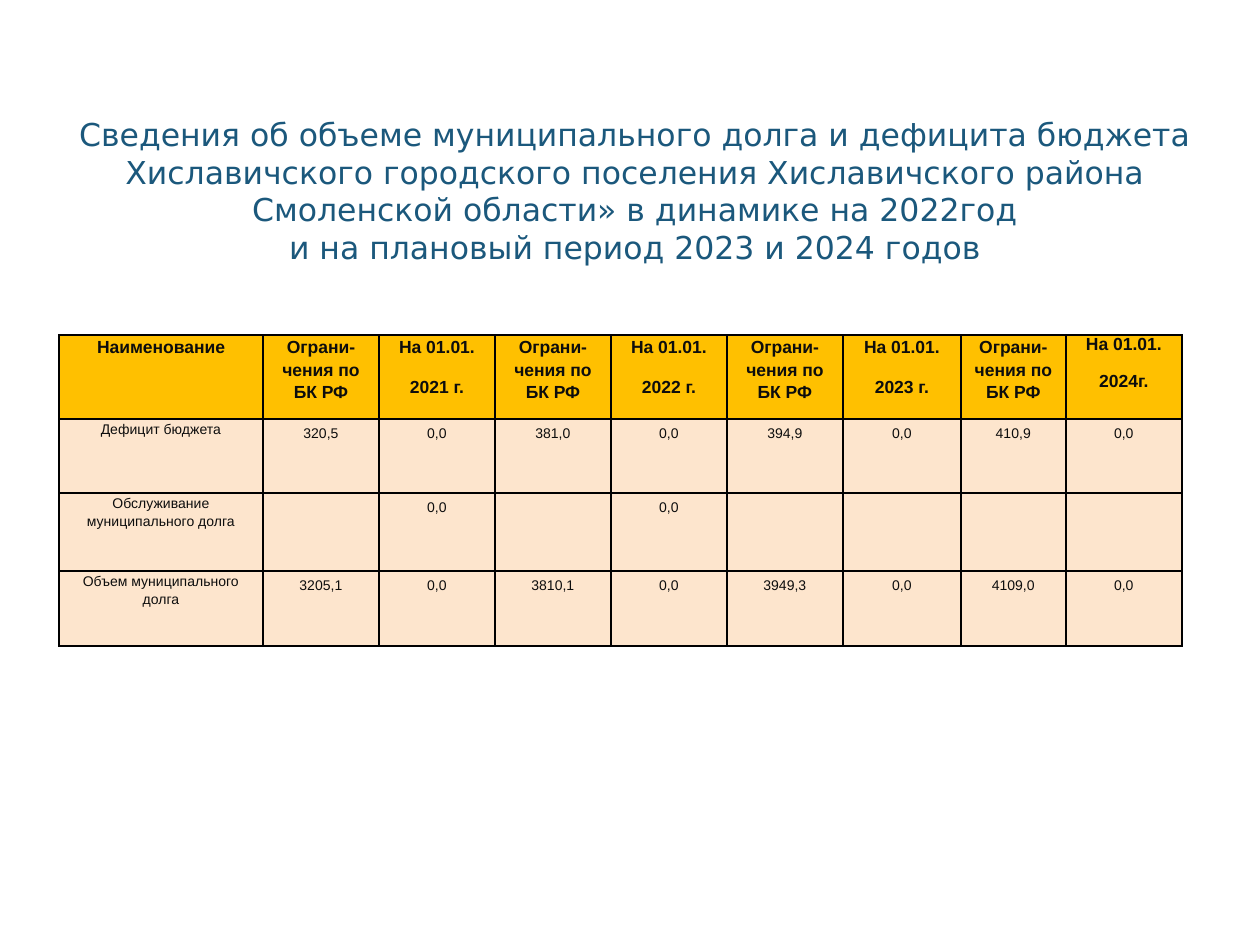
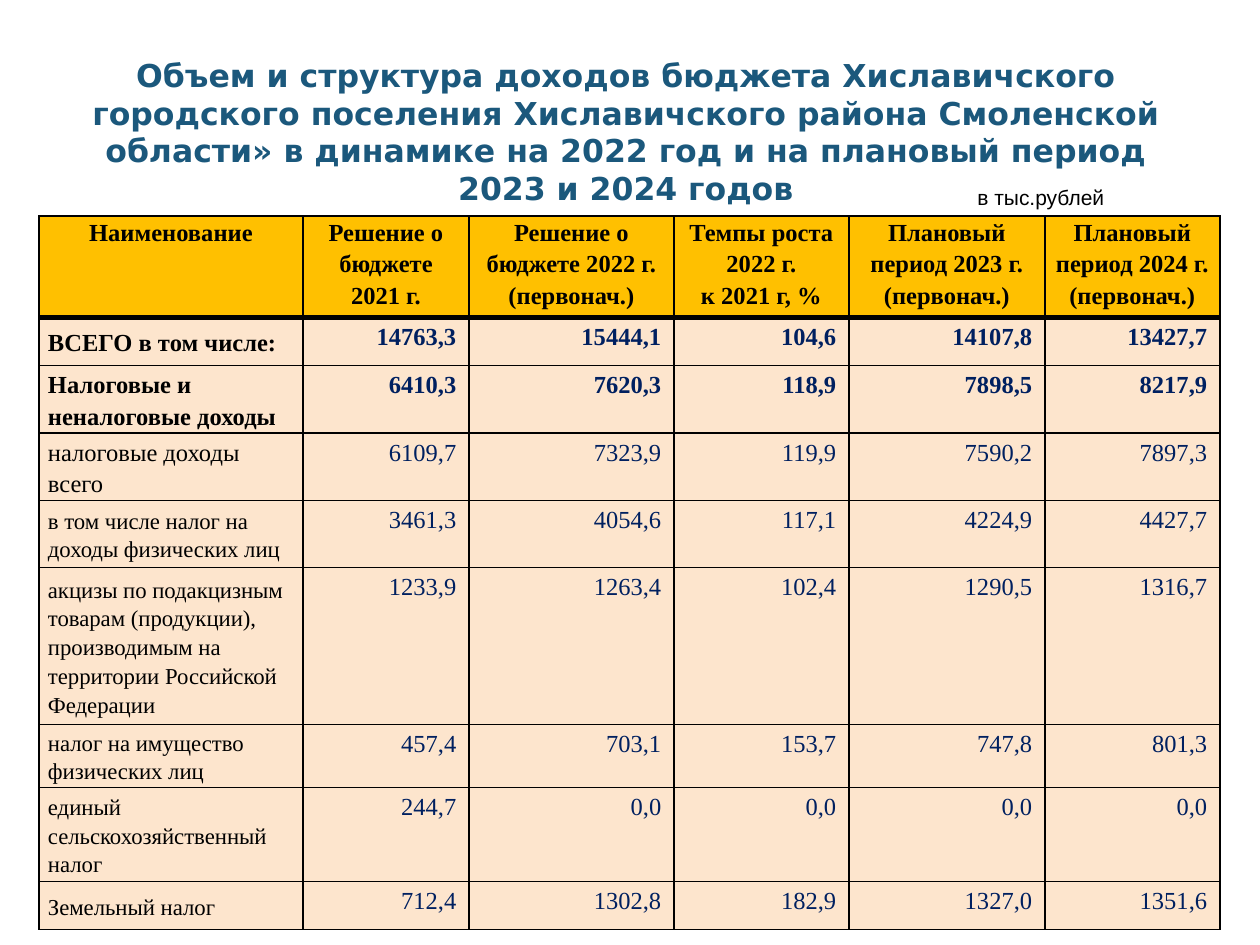
from dataclasses import dataclass, replace
from typing import Any

from lxml import etree
from pptx import Presentation
from pptx.dml.color import RGBColor
from pptx.enum.text import MSO_ANCHOR, MSO_AUTO_SIZE, PP_ALIGN
from pptx.oxml.ns import qn
from pptx.util import Pt

SCALE = 914400 / 126
LEFT, MID, RIGHT = PP_ALIGN.LEFT, PP_ALIGN.CENTER, PP_ALIGN.RIGHT
TOP, CENTRE, BASE = MSO_ANCHOR.TOP, MSO_ANCHOR.MIDDLE, MSO_ANCHOR.BOTTOM
GROW = MSO_AUTO_SIZE.SHAPE_TO_FIT_TEXT

BLUE = RGBColor(0x1B, 0x58, 0x7C)
NAVY = RGBColor(0x00, 0x20, 0x60)
BLACK = RGBColor(0x00, 0x00, 0x00)
INK = RGBColor(0x0D, 0x0D, 0x0D)
GOLD = RGBColor(0xFF, 0xC0, 0x00)
PEACH = RGBColor(0xFD, 0xE5, 0xCD)

SANS, SERIF, HEAD = "Arial", "Times New Roman", "DejaVu Sans"


@dataclass(frozen=True)
class Style:
    size: int
    color: RGBColor
    font: str
    bold: bool = False
    align: Any = MID
    line: float | None = None
    after: int = 0
    anchor: Any = TOP
    tight: bool = False


@dataclass(frozen=True)
class Box:
    left: int
    top: int
    width: int
    height: int


@dataclass(frozen=True)
class Cell:
    text: str
    style: Style
    fill: RGBColor = PEACH


@dataclass(frozen=True)
class Grid:
    left: int
    top: int
    cols: tuple[int, ...]
    rows: tuple[int, ...]
    rule: int


TITLE = Style(18, BLUE, HEAD, anchor=BASE)
NOTE = Style(12, BLACK, SANS, align=LEFT)

DEBT_HEAD = Style(10, INK, SANS, True, line=1.15, after=10, tight=True)
DEBT_NAME = replace(DEBT_HEAD, size=8, bold=False)
DEBT_NUM = Style(8, INK, SANS)

TAX_HEAD = Style(14, BLACK, SERIF, True, line=1.15, tight=True)
TAX_NAME = replace(TAX_HEAD, align=LEFT, anchor=CENTRE)
TAX_NUM = Style(14, NAVY, SERIF, align=RIGHT)

DEBT_GRID = Grid(59, 335, (204, 116, 116, 116, 116, 116, 118, 105, 116),
                 (84, 74, 78, 75), 1)
TAX_GRID = Grid(39, 216, (264, 166, 205, 175, 196, 175),
                (94, 48, 67, 62, 67, 143, 58, 86, 48), 3)

LIMIT = "Ограни-чения по БК РФ"
DATES = ("2021 г.", "2022 г.", "2023 г.", "2024г.")
DEBTS = (
    ("Дефицит бюджета",
     "320,5", "0,0", "381,0", "0,0", "394,9", "0,0", "410,9", "0,0"),
    ("Обслуживание муниципального долга",
     "", "0,0", "", "0,0", "", "", "", ""),
    ("Объем муниципального долга",
     "3205,1", "0,0", "3810,1", "0,0", "3949,3", "0,0", "4109,0", "0,0"),
)

TAX_TOPS = (
    "Наименование",
    "Решение о бюджете 2021 г.",
    "Решение о бюджете 2022 г.\n(первонач.)",
    "Темпы роста\n2022 г.\nк 2021 г, %",
    "Плановый период 2023 г.\n(первонач.)",
    "Плановый период 2024 г.\n(первонач.)",
)
TAXES = (
    ("ВСЕГО в том числе:",
     "14763,3", "15444,1", "104,6", "14107,8", "13427,7"),
    ("Налоговые и неналоговые доходы",
     "6410,3", "7620,3", "118,9", "7898,5", "8217,9"),
    ("налоговые доходы всего",
     "6109,7", "7323,9", "119,9", "7590,2", "7897,3"),
    ("в том числе налог на доходы физических лиц",
     "3461,3", "4054,6", "117,1", "4224,9", "4427,7"),
    ("акцизы по подакцизным товарам (продукции), производимым на "
     "территории Российской Федерации",
     "1233,9", "1263,4", "102,4", "1290,5", "1316,7"),
    ("налог на имущество физических лиц",
     "457,4", "703,1", "153,7", "747,8", "801,3"),
    ("единый сельскохозяйственный налог",
     "244,7", "0,0", "0,0", "0,0", "0,0"),
    ("Земельный налог",
     "712,4", "1302,8", "182,9", "1327,0", "1351,6"),
)


def px(size: int) -> int:
    return round(size * SCALE)


def apply(item: Any, form: dict[str, Any]) -> None:
    for name, value in form.items():
        setattr(item, name, value)


def write(frame: Any, text: str, style: Style) -> None:
    frame.text = text
    for para in frame.paragraphs:
        apply(para, {"alignment": style.align, "line_spacing": style.line,
                     "space_after": Pt(style.after)})
        for run in para.runs:
            apply(run.font, {"size": Pt(style.size), "name": style.font,
                             "bold": style.bold})
            run.font.color.rgb = style.color


def label(slide: Any, box: Box, text: str, style: Style,
          form: dict[str, Any]) -> None:
    area = px(box.left), px(box.top), px(box.width), px(box.height)
    frame = slide.shapes.add_textbox(*area).text_frame
    write(frame, text, style)
    apply(frame, {"word_wrap": True, "vertical_anchor": style.anchor, **form})


def title(slide: Any, box: Box, text: str, bold: bool) -> None:
    label(slide, box, text, replace(TITLE, bold=bold), {"margin_bottom": 0})


def edge(cell: Any, sides: dict[str, int]) -> None:
    props = cell._tc.get_or_add_tcPr()
    for spot, (side, width) in enumerate(sides.items()):
        line = etree.Element(qn(f"a:ln{side}"), w=str(Pt(width)))
        fill = etree.SubElement(line, qn("a:solidFill"))
        etree.SubElement(fill, qn("a:srgbClr"), val=str(BLACK))
        props.insert(spot, line)


def paint(cell: Any, data: Cell) -> None:
    write(cell.text_frame, data.text, data.style)
    cell.vertical_anchor = data.style.anchor
    if data.style.tight:
        apply(cell, {"margin_left": px(9), "margin_right": px(9),
                     "margin_top": 0, "margin_bottom": 0})
    cell.fill.solid()
    cell.fill.fore_color.rgb = data.fill


def table(slide: Any, grid: Grid, cells: list[list[Cell]]) -> None:
    area = grid.left, grid.top, sum(grid.cols), sum(grid.rows)
    frame = slide.shapes.add_table(len(grid.rows), len(grid.cols),
                                   *map(px, area))
    body = frame.table
    apply(body, {"first_row": False, "horz_banding": False})
    for col, width in zip(body.columns, grid.cols):
        col.width = px(width)
    for row, height in zip(body.rows, grid.rows):
        row.height = px(height)
    for y, line in enumerate(cells):
        for x, data in enumerate(line):
            cell = body.cell(y, x)
            paint(cell, data)
            edge(cell, {"L": 1, "R": 1, "T": grid.rule if y == 1 else 1,
                        "B": grid.rule if y == 0 else 1})


def debt(slide: Any) -> None:
    title(slide, Box(59, 59, 1152, 207),
          "Сведения об объеме муниципального долга и дефицита бюджета "
          "Хиславичского городского поселения Хиславичского района "
          "Смоленской области» в динамике на 2022год\v"
          "и на плановый период 2023 и 2024 годов", False)
    tops = [Cell("Наименование", DEBT_HEAD, GOLD)]
    for date in DATES:
        style = replace(DEBT_HEAD, line=None) if date == DATES[-1] else DEBT_HEAD
        tops += [Cell(LIMIT, DEBT_HEAD, GOLD),
                 Cell(f"На 01.01.\n{date}", style, GOLD)]
    rows = [[Cell(name, DEBT_NAME)] + [Cell(num, DEBT_NUM) for num in nums]
            for name, *nums in DEBTS]
    table(slide, DEBT_GRID, [tops, *rows])


def tax(slide: Any) -> None:
    title(slide, Box(59, 39, 1134, 168),
          "Объем и структура доходов бюджета Хиславичского городского "
          "поселения Хиславичского района Смоленской области» в динамике "
          "на 2022 год и на плановый период 2023 и 2024 годов", True)
    cells = [[Cell(text, TAX_HEAD, GOLD) for text in TAX_TOPS]]
    for y, (name, *nums) in enumerate(TAXES):
        bold = y < 2
        lead = replace(TAX_NAME, bold=bold, size=14 if y < 3 else 13)
        style = replace(TAX_NUM, bold=bold)
        cells.append([Cell(name, lead)] + [Cell(num, style) for num in nums])
    table(slide, TAX_GRID, cells)
    label(slide, Box(965, 178, 197, 38), "в тыс.рублей", NOTE,
          {"auto_size": GROW})


def main() -> None:
    deck = Presentation()
    apply(deck, {"slide_width": px(1260), "slide_height": px(945)})
    for draw in (debt, tax):
        draw(deck.slides.add_slide(deck.slide_layouts[6]))
    deck.save("out.pptx")


if __name__ == "__main__":
    main()
